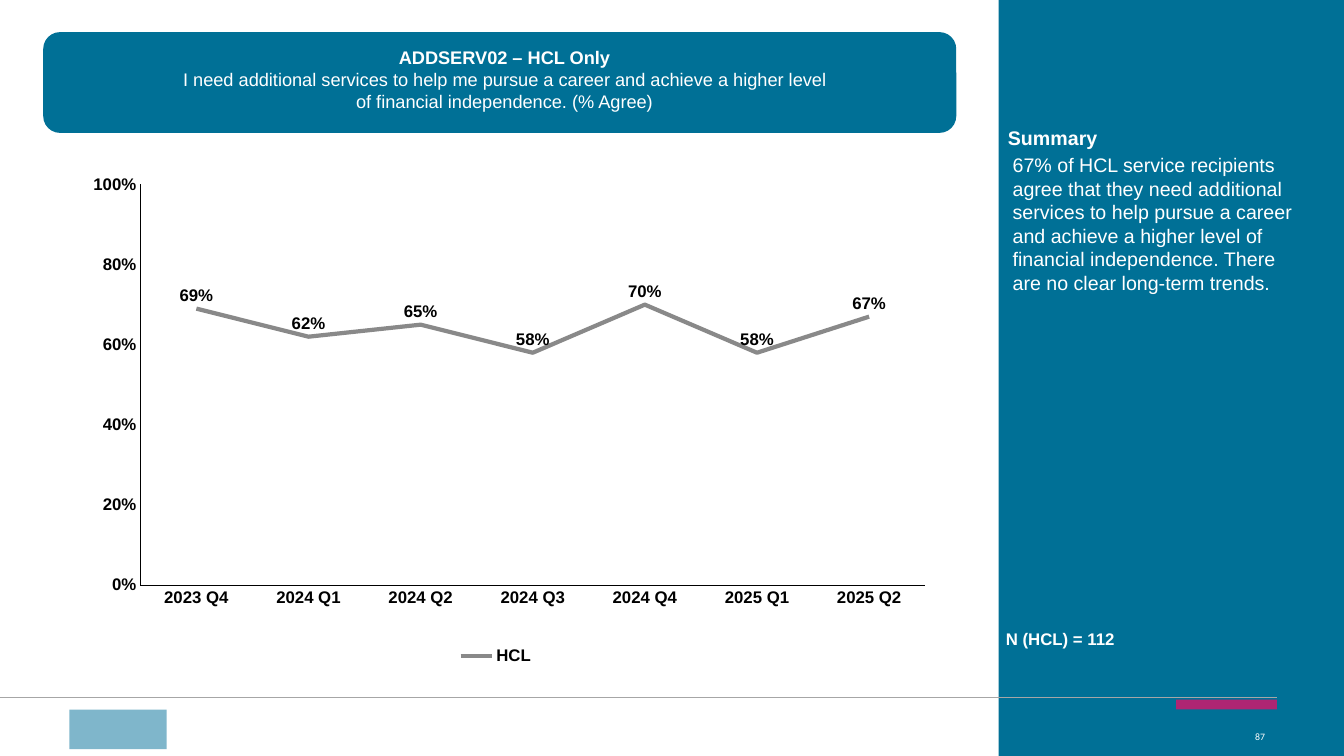
from dataclasses import dataclass

import pptx
import pptx.chart.data
import pptx.dml.color
import pptx.enum.chart
import pptx.enum.shapes
import pptx.enum.text
import pptx.oxml
import pptx.oxml.ns
import pptx.util
from pptx.util import Cm, Pt

Align = pptx.enum.text.PP_ALIGN


def rgb(value):
    return pptx.dml.color.RGBColor.from_string(value)


@dataclass(frozen=True)
class Theme:
    font: str = "Arial"
    number_font: str = "Calibri"
    white: str = "FFFFFF"
    black: str = "000000"
    teal: str = "007096"
    light_teal: str = "7FB6CB"
    magenta: str = "AE2573"
    rule: str = "A6A6A6"
    series: str = "898989"
    title: float = 13
    body: float = 14
    label: float = 12
    number: float = 7


@dataclass(frozen=True)
class Box:
    """A region of the slide, in centimetres."""
    left: float
    top: float
    width: float
    height: float

    def inner(self, left, top, width, height):
        return Box(self.left + left, self.top + top, width, height)

    def lengths(self):
        return Cm(self.left), Cm(self.top), Cm(self.width), Cm(self.height)


THEME = Theme()
CATEGORIES = ["2023 Q4", "2024 Q1", "2024 Q2", "2024 Q3", "2024 Q4", "2025 Q1", "2025 Q2"]
AGREEMENT = [0.69, 0.62, 0.65, 0.58, 0.70, 0.58, 0.67]


def style_font(font, size, color, bold=False, name=THEME.font):
    font.name, font.size, font.bold = name, Pt(size), bold
    font.color.rgb = rgb(color)


def add_block(slide, box, color, kind=pptx.enum.shapes.MSO_SHAPE.RECTANGLE):
    shape = slide.shapes.add_shape(kind, *box.lengths())
    shape.shadow.inherit = False
    shape.fill.solid()
    shape.fill.fore_color.rgb = rgb(color)
    shape.line.fill.background()


def add_text(slide, box, text, size, bold=False, name=THEME.font):
    frame = slide.shapes.add_textbox(*box.lengths()).text_frame
    frame.word_wrap = True
    frame.text = text
    style_font(frame.paragraphs[0].runs[0].font, size, THEME.white, bold, name)
    return frame


def add_banner(slide, box):
    """Rounded banner with the slide title in front of it."""
    add_block(slide, box, THEME.teal, pptx.enum.shapes.MSO_SHAPE.ROUNDED_RECTANGLE)
    title = slide.shapes.title
    slide.shapes._spTree.append(title._element)
    title.left, title.top, title.width, title.height = box.inner(3.15, 0.23, 16.94, 1.9).lengths()
    frame = title.text_frame
    frame.word_wrap = True
    frame.auto_size = pptx.enum.text.MSO_AUTO_SIZE.NONE
    frame.vertical_anchor = pptx.enum.text.MSO_ANCHOR.TOP
    paragraph = frame.paragraphs[0]
    paragraph.text = ("ADDSERV02 – HCL Only\vI need additional services to help me pursue a career "
                      "and achieve a higher level of financial independence. (% Agree)")
    paragraph.alignment = Align.CENTER
    for index, run in enumerate(paragraph.runs):
        style_font(run.font, THEME.title, THEME.white, bold=index == 0)


def set_plot_area(chart, x, y, width, height):
    """Fix the inner plot area as fractions of the chart."""
    values = "".join(f'<c:{tag} val="{value}"/>' for tag, value in
                     (("x", x), ("y", y), ("w", width), ("h", height)))
    layout = pptx.oxml.parse_xml(
        f'<c:layout {pptx.oxml.ns.nsdecls("c")}><c:manualLayout><c:layoutTarget val="inner"/>'
        f'<c:xMode val="edge"/><c:yMode val="edge"/>{values}</c:manualLayout></c:layout>')
    plot_area = chart._chartSpace.chart.plotArea
    for old in plot_area.findall(pptx.oxml.ns.qn("c:layout")):
        plot_area.remove(old)
    plot_area.insert(0, layout)


def add_trend_chart(slide, box):
    data = pptx.chart.data.CategoryChartData(number_format="0%")
    data.categories = CATEGORIES
    data.add_series("HCL", AGREEMENT)
    chart = slide.shapes.add_chart(pptx.enum.chart.XL_CHART_TYPE.LINE, *box.lengths(), data).chart
    style_font(chart.font, THEME.label, THEME.black, bold=True)
    chart.has_title = False
    chart.has_legend = True
    chart.legend.position = pptx.enum.chart.XL_LEGEND_POSITION.BOTTOM
    chart.legend.include_in_layout = False
    set_plot_area(chart, 0.087, 0.07, 0.912, 0.769)

    for axis, width in ((chart.category_axis, 0.75), (chart.value_axis, 1)):
        axis.has_major_gridlines = False
        axis.major_tick_mark = axis.minor_tick_mark = pptx.enum.chart.XL_TICK_MARK.NONE
        axis.format.line.color.rgb = rgb(THEME.black)
        axis.format.line.width = Pt(width)
        style_font(axis.tick_labels.font, THEME.label, THEME.black, bold=True)
    value_axis = chart.value_axis
    value_axis.minimum_scale, value_axis.maximum_scale, value_axis.major_unit = 0, 1, 0.2
    value_axis.tick_labels.number_format = "0%"
    value_axis.tick_labels.number_format_is_linked = False

    plot = chart.plots[0]
    plot.vary_by_categories = False
    series = plot.series[0]
    series.smooth = False
    series.marker.style = pptx.enum.chart.XL_MARKER_STYLE.NONE
    series.format.line.color.rgb = rgb(THEME.series)
    series.format.line.width = Pt(3)
    labels = series.data_labels
    labels.show_value = True
    labels.number_format, labels.number_format_is_linked = "0%", False
    labels.position = pptx.enum.chart.XL_LABEL_POSITION.ABOVE
    style_font(labels.font, THEME.label, THEME.black, bold=True)


def add_summary_panel(slide, box):
    add_block(slide, box, THEME.teal)
    add_text(slide, box.inner(-0.02, 3.05, 8.7, 0.86), "Summary", THEME.body, bold=True)
    add_text(slide, box.inner(0.1, 3.73, 7.77, 5.11),
             "67% of HCL service recipients agree that they need additional services to help pursue "
             "a career and achieve a higher level of financial independence. There are no clear "
             "long-term trends.", THEME.body)
    add_text(slide, box.inner(-0.07, 15.72, 6.35, 0.76), "N (HCL) = 112", THEME.label, bold=True)


def add_footer(slide, box):
    """Rule along the top edge, accent at its right end, plain block and page number."""
    right = box.left + box.width
    rule = slide.shapes.add_connector(pptx.enum.shapes.MSO_CONNECTOR.STRAIGHT, Cm(box.left),
                                      Cm(box.top), Cm(right), Cm(box.top))
    rule.line.color.rgb = rgb(THEME.rule)
    rule.line.width = Pt(0.75)
    rule._element.spPr.append(pptx.oxml.parse_xml(f'<a:effectLst {pptx.oxml.ns.nsdecls("a")}/>'))
    add_block(slide, box.inner(box.width - 2.54, 0.05, 2.54, 0.25), THEME.magenta)
    add_block(slide, box.inner(1.75, 0.3, 2.45, 1), THEME.light_teal)

    number = add_text(slide, box.inner(box.width - 12.8, 0.6, 12.75, 0.76), "87",
                      THEME.number, name=THEME.number_font)
    number.vertical_anchor = pptx.enum.text.MSO_ANCHOR.MIDDLE
    number.paragraphs[0].alignment = Align.RIGHT


def main():
    presentation = pptx.Presentation()
    presentation.slide_width, presentation.slide_height = Cm(33.87), Cm(19.05)
    slide = presentation.slides.add_slide(presentation.slide_layouts.get_by_name("Title Only"))
    add_banner(slide, Box(1.09, 0.81, 23.01, 2.54))
    add_summary_panel(slide, Box(25.17, 0, 8.7, 19.05))
    add_trend_chart(slide, Box(1.65, 3.73, 21.69, 13.13))
    add_footer(slide, Box(0, 17.58, 32.18, 1.47))
    presentation.save("out.pptx")


if __name__ == "__main__":
    main()
